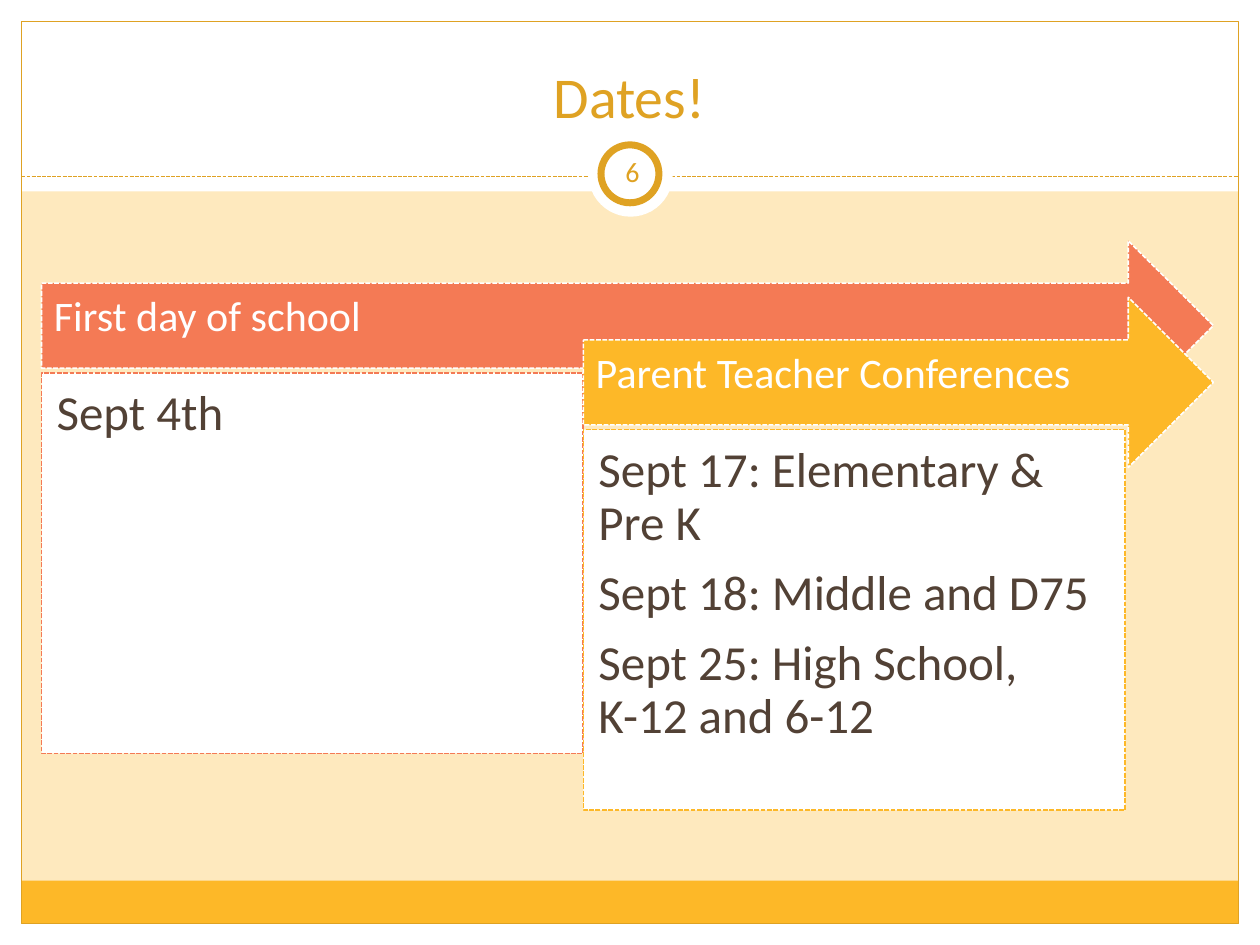
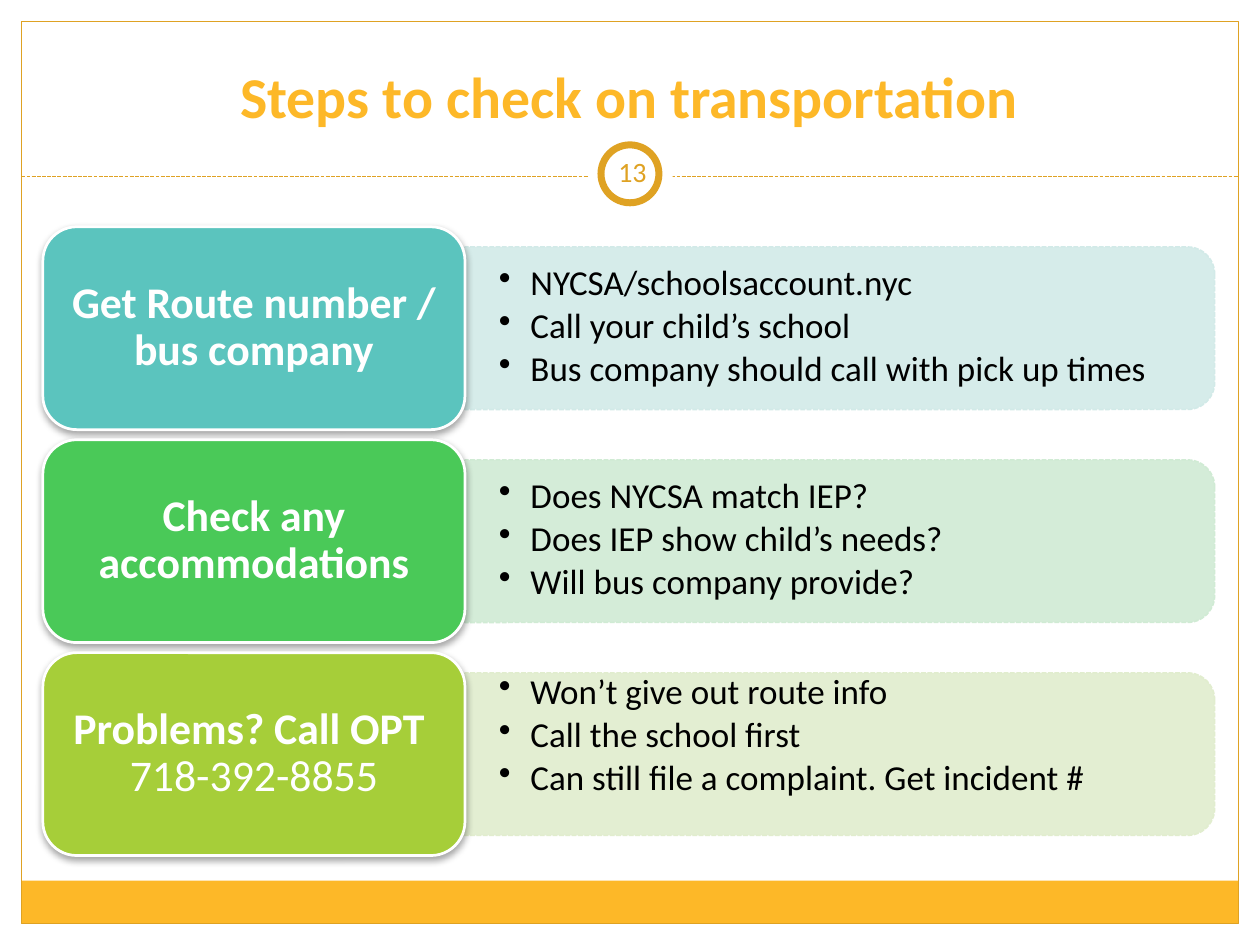
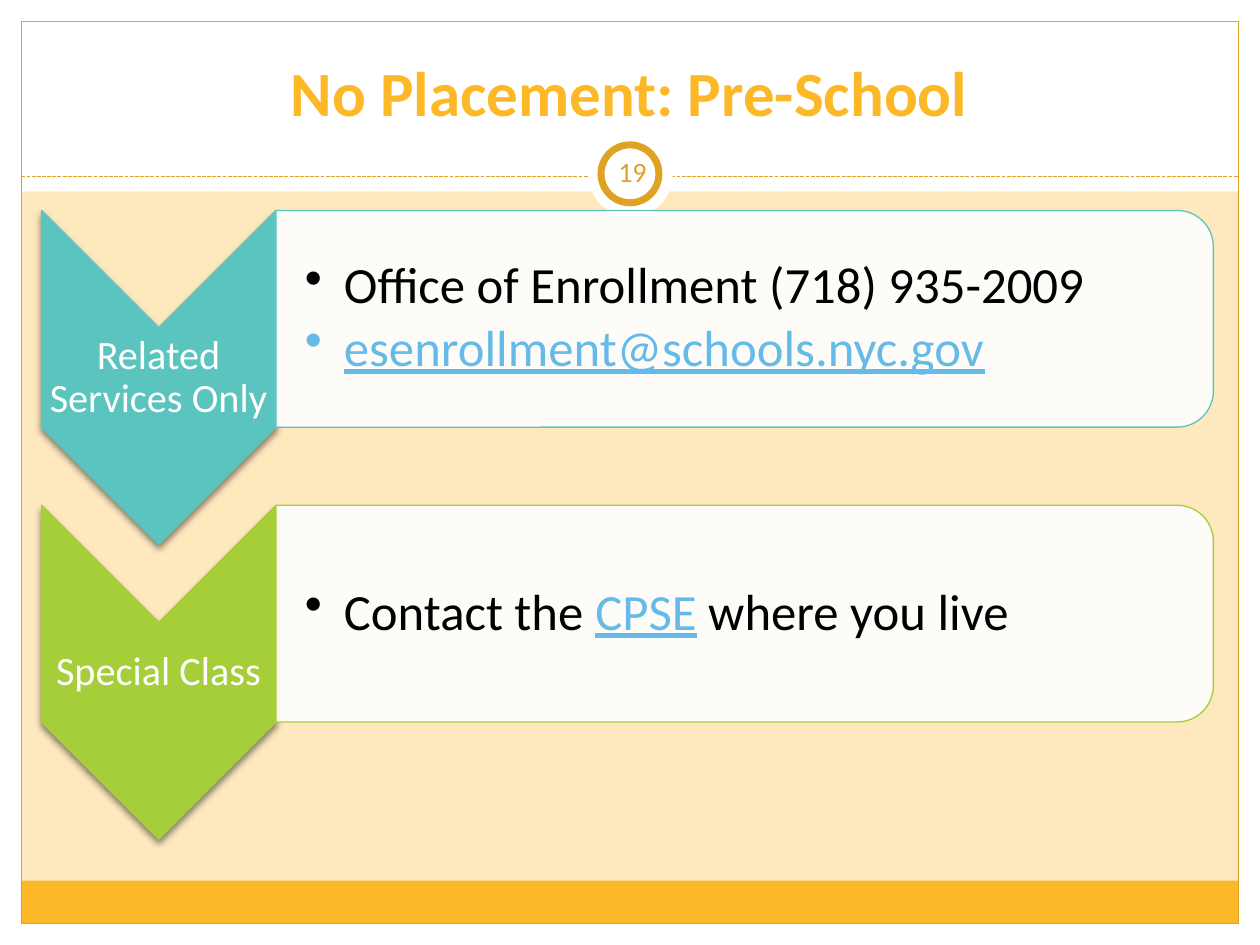
from lxml import etree
from pptx import Presentation, util as u
from pptx.dml.color import RGBColor
from pptx.enum import dml, shapes, text
from pptx.oxml.ns import qn

# Shared style
COLORS = {
    "white": "FFFFFF", "black": "000000", "cream": "FEE9BE", "amber": "FDB828",
    "gold": "DFA223", "coral": "F47A55", "brown": "524135", "link": "66BAE8",
    "teal": "5BC4BE", "green": "4AC958", "lime": "A6CE39",
    "pale teal": "D2EAE8", "pale green": "D0EBD4", "pale lime": "E1EDCE",
}
FONT = "Calibri"
WIDTH, HEIGHT = 10, 7.5
EDGE = 0.17
SHAPE = shapes.MSO_SHAPE
CENTER = text.PP_ALIGN.CENTER
MIDDLE, TOP, BOTTOM = (text.MSO_ANCHOR.MIDDLE, text.MSO_ANCHOR.TOP,
                       text.MSO_ANCHOR.BOTTOM)
LINK = {"color": "link", "underline": True}

# Content: a paragraph is a string or a list of runs; a run is a string or (string, format)
DATES = [
    ("First day of school", "coral", ["Sept 4th"]),
    ("Parent Teacher Conferences", "amber",
     ["Sept 17: Elementary & Pre K", "Sept 18: Middle and D75",
      "Sept 25: High School, K-12 and 6-12"]),
]
STEPS = [
    (["Get Route number / bus company"], "teal", 0,
     ["NYCSA/schoolsaccount.nyc", "Call your child’s school",
      "Bus company should call with pick up times"]),
    (["Check any accommodations"], "green", 0,
     ["Does NYCSA match IEP?", "Does IEP show child’s needs?",
      "Will bus company provide?"]),
    ([["Problems? Call OPT ", "\n", ("718-392-8855", {"bold": False})]], "lime", 0.14,
     ["Won’t give out route info", "Call the school first",
      "Can still file a complaint. Get incident #"]),
]
PLACEMENTS = [
    ("Related Services Only", "teal",
     ["Office of Enrollment (718) 935-2009", [("esenrollment@schools.nyc.gov", LINK)]]),
    ("Special Class", "lime",
     [["Contact the ", ("CPSE", LINK), " where you live"]]),
]


def rgb(name):
    return RGBColor.from_string(COLORS[name])


def write(shape, paragraphs, size=18, color="black", bold=False, align=None,
          anchor=MIDDLE, insets=(0.1, 0.05, 0.1, 0.05), spacing=1.0, after=0, indent=0):
    """Fill a shape with text; after is a share of the text size, indent adds bullets."""
    frame = shape.text_frame
    frame.word_wrap = True
    frame.vertical_anchor = anchor
    (frame.margin_left, frame.margin_top,
     frame.margin_right, frame.margin_bottom) = map(u.Inches, insets)
    for index, runs in enumerate(paragraphs):
        paragraph = frame.add_paragraph() if index else frame.paragraphs[0]
        paragraph.alignment = align or text.PP_ALIGN.LEFT
        paragraph.line_spacing = spacing
        paragraph.space_after = u.Pt(round(size * after, 1))
        if indent:
            properties = paragraph._p.get_or_add_pPr()
            properties.set("marL", str(u.Inches(indent)))
            properties.set("indent", str(-u.Inches(indent)))
            etree.SubElement(properties, qn("a:buChar")).set("char", "•")
        for item in [runs] if isinstance(runs, str) else runs:
            words, extra = (item, {}) if isinstance(item, str) else item
            if words == "\n":
                paragraph.add_line_break()
                continue
            run = paragraph.add_run()
            run.text = words
            run.font.name = FONT
            run.font.size = u.Pt(size)
            run.font.bold = extra.get("bold", bold)
            run.font.underline = extra.get("underline")
            run.font.color.rgb = rgb(extra.get("color", color))


def add_text(slide, box, paragraphs, **style):
    write(slide.shapes.add_textbox(*map(u.Inches, box)), paragraphs, **style)


def style_line(line, color, width, dashed):
    line.color.rgb = rgb(color)
    line.width = u.Pt(width)
    if dashed:
        line.dash_style = dml.MSO_LINE.SQUARE_DOT


def draw(slide, kind, box, fill=None, line=None, width=0.75, dashed=False,
         opacity=100, shadow=0, turned=False):
    """Add a shape that covers box; turned shapes are rotated a quarter clockwise."""
    left, top, wide, high = box
    if turned:
        left, top = left + (wide - high) / 2, top + (high - wide) / 2
        wide, high = high, wide
    shape = slide.shapes.add_shape(kind, *map(u.Inches, (left, top, wide, high)))
    shape.rotation = 90 if turned else 0
    shape.shadow.inherit = False
    properties = shape._element.spPr
    if fill:
        shape.fill.solid()
        shape.fill.fore_color.rgb = rgb(fill)
        if opacity < 100:
            tint = properties.find(qn("a:solidFill"))[0]
            etree.SubElement(tint, qn("a:alpha")).set("val", str(opacity * 1000))
    else:
        shape.fill.background()
    if line:
        style_line(shape.line, line, width, dashed)
    else:
        shape.line.fill.background()
    if shadow:
        outer = etree.SubElement(properties.find(qn("a:effectLst")), qn("a:outerShdw"),
                                 blurRad=str(u.Pt(4)), dist=str(u.Pt(2)),
                                 dir="5400000", rotWithShape="0")
        shade = etree.SubElement(outer, qn("a:srgbClr"), val=COLORS["black"])
        etree.SubElement(shade, qn("a:alpha")).set("val", str(shadow * 1000))
    return shape


def add_slide(presentation, title, number, background="cream", **title_style):
    """Start a slide with the frame, bands, title and page number all slides share."""
    slide = presentation.slides.add_slide(presentation.slide_layouts[6])
    slide.background.fill.solid()
    slide.background.fill.fore_color.rgb = rgb(background)
    inner = WIDTH - 2 * EDGE
    # White margins and the bottom band
    for box in [(0, HEIGHT - EDGE, WIDTH, EDGE), (0, 0, WIDTH, 1.52),
                (0, 0, EDGE, HEIGHT), (WIDTH - EDGE, 0, EDGE, HEIGHT)]:
        draw(slide, SHAPE.RECTANGLE, box, fill="white")
    draw(slide, SHAPE.RECTANGLE, (EDGE, 6.99, inner, 0.34), fill="amber")
    draw(slide, SHAPE.RECTANGLE, (EDGE, EDGE, inner, HEIGHT - 2 * EDGE), line="gold")
    # Dashed rule with the page number ring
    rule = slide.shapes.add_connector(
        shapes.MSO_CONNECTOR.STRAIGHT,
        *map(u.Inches, (EDGE, 1.4, WIDTH - EDGE, 1.4)))
    style_line(rule.line, "gold", 0.75, True)
    etree.SubElement(rule._element.spPr, qn("a:effectLst"))
    draw(slide, SHAPE.OVAL, (4.67, 1.05, 0.67, 0.67), fill="white")
    draw(slide, SHAPE.OVAL, (4.77, 1.15, 0.46, 0.46), fill="white", line="gold", width=4)
    add_text(slide, (4.77, 1.12, 0.5, 0.48), [str(number)], size=16, color="gold",
             align=CENTER, insets=[0.05] * 4)
    add_text(slide, (0.33, 0.25, 9.33, 0.83), [title], align=CENTER, anchor=BOTTOM,
             **title_style)
    return slide


def build_dates(presentation):
    slide = add_slide(presentation, "Dates!", 6, size=33, color="gold")
    left, right, column, drop = 0.33, 9.63, 4.3, 0.45
    for index, (heading, color, lines) in enumerate(DATES):
        x, y = left + index * column, 1.91 + index * drop
        arrow = draw(slide, SHAPE.RIGHT_ARROW, (x, y, right - x, 1.35), fill=color,
                     line="white", width=0.9, dashed=True)
        write(arrow, [heading], size=24, color="white", spacing=0.9, after=0.35,
              insets=(0.1, 0.1, 0.28, 0.22))
        card = draw(slide, SHAPE.RECTANGLE, (x, y + 1.05, column, 3.02), fill="white",
                    line=color, width=0.9, dashed=True)
        write(card, lines, size=28, color="brown", anchor=TOP, spacing=0.9, after=0.35,
              insets=[0.12] * 4)


def build_steps(presentation):
    slide = add_slide(presentation, "Steps to check on transportation", 13,
                      background="white", size=33, color="amber", bold=True)
    left, tab_width, row = 0.34, 3.35, 1.69
    bar_left = left + tab_width
    for index, (label, color, lift, lines) in enumerate(STEPS):
        y = 1.8 + index * row
        pale = "pale " + color
        draw(slide, SHAPE.ROUND_2_SAME_RECTANGLE, (bar_left, y + 0.16, 5.95, 1.29),
             fill=pale, line=pale, width=0.9, dashed=True, opacity=90, turned=True)
        add_text(slide, (bar_left, y + 0.22 - lift, 5.89, 1.16), lines, size=20,
                 spacing=0.9, after=0.15, indent=0.25, insets=(0.27, 0.14, 0.27, 0.14))
        tab = draw(slide, SHAPE.ROUNDED_RECTANGLE, (left, y, tab_width, 1.61),
                   fill=color, line="white", width=1.57, shadow=35)
        write(tab, label, size=25, color="white", bold=True, align=CENTER,
              spacing=0.9, after=0.35)


def build_placements(presentation):
    slide = add_slide(presentation, "No Placement: Pre-School", 19, size=36,
                      color="amber", bold=True, spacing=0.9)
    left, chevron_width, row = 0.33, 1.86, 2.34
    panel_left = left + chevron_width
    for index, (label, color, lines) in enumerate(PLACEMENTS):
        y = 1.67 + index * row
        draw(slide, SHAPE.CHEVRON, (left, y, chevron_width, 2.65), fill=color,
             line=color, shadow=45, turned=True)
        add_text(slide, (left, y + chevron_width / 2, chevron_width, 0.8), [label],
                 size=23, color="white", align=CENTER, spacing=0.9, after=0.35,
                 insets=[0.02] * 4)
        draw(slide, SHAPE.ROUND_2_SAME_RECTANGLE, (panel_left, y, 7.44, 1.72),
             fill="white", line=color, opacity=90, turned=True)
        add_text(slide, (panel_left, y + 0.08, 7.36, 1.56), lines, size=29,
                 spacing=0.9, after=0.15, indent=0.31, insets=(0.23, 0.02, 0.02, 0.02))


def main():
    presentation = Presentation()
    presentation.slide_width = u.Inches(WIDTH)
    presentation.slide_height = u.Inches(HEIGHT)
    build_dates(presentation)
    build_steps(presentation)
    build_placements(presentation)
    presentation.save("out.pptx")


if __name__ == "__main__":
    main()
